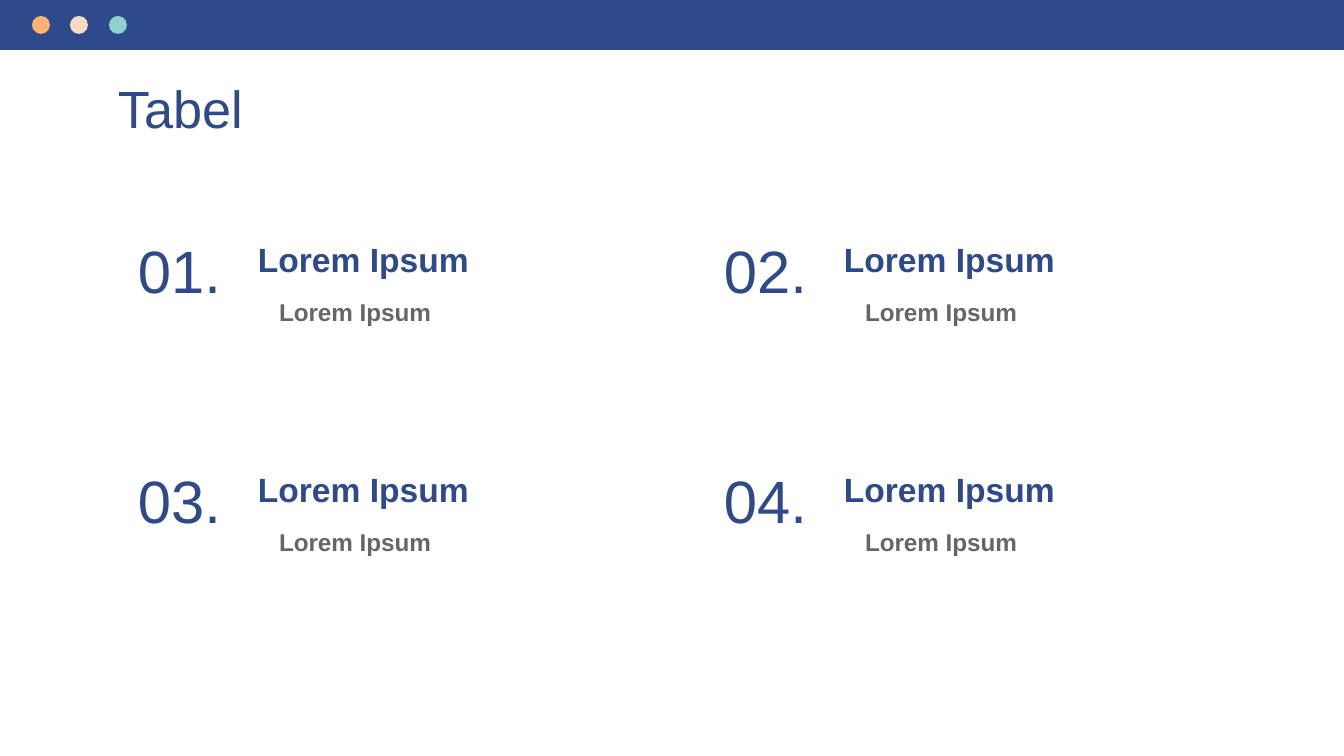
from dataclasses import dataclass

import pptx
import pptx.dml.color
import pptx.enum.shapes
import pptx.enum.text
import pptx.util

TITLE = "Tabel"
ENTRIES = [
    ("01.", "Lorem Ipsum", "Lorem Ipsum"),
    ("02.", "Lorem Ipsum", "Lorem Ipsum"),
    ("03.", "Lorem Ipsum", "Lorem Ipsum"),
    ("04.", "Lorem Ipsum", "Lorem Ipsum"),
]


@dataclass(frozen=True)
class Theme:
    font: str = "Arial"
    navy: str = "2F4A8A"
    grey: str = "666666"
    dots: tuple = ("FFB172", "F8DBC4", "90D1CB")
    title_size: int = 28
    number_size: int = 32
    heading_size: int = 18
    detail_size: int = 13


THEME = Theme()
WIDTH, HEIGHT = 1344, 756
EMU_PER_PX = 914400 * 10 / WIDTH
BAR_HEIGHT = 50
INSET = 13
COLUMNS = 2
COLUMN_STEP, ROW_STEP = 586, 230
HEADING_WIDTHS = (392, 400)
DOT_LEFT, DOT_TOP, DOT_SIZE = 32, 16, 18
DOT_SPAN = 77  # from the first dot to the third

ALIGN = pptx.enum.text.PP_ALIGN
ANCHOR = pptx.enum.text.MSO_ANCHOR
SHAPE = pptx.enum.shapes.MSO_SHAPE


def px(length):
    return pptx.util.Emu(round(length * EMU_PER_PX))


def rgb(colour):
    return pptx.dml.color.RGBColor.from_string(colour)


def add_text(slide, text, box, *, size, colour=THEME.navy, bold=False,
             align=ALIGN.LEFT, anchor=ANCHOR.TOP, margin=0, indent=0):
    frame = slide.shapes.add_textbox(*map(px, box)).text_frame
    frame.word_wrap = True
    frame.vertical_anchor = anchor
    frame.margin_left = frame.margin_right = px(INSET)
    frame.margin_top = frame.margin_bottom = px(INSET)
    paragraph = frame.paragraphs[0]
    paragraph.alignment = align
    if margin:
        properties = paragraph._p.get_or_add_pPr()
        properties.set("marL", str(px(margin)))
        properties.set("indent", str(px(indent)))
    run = paragraph.add_run()
    run.text = text
    run.font.name = THEME.font
    run.font.size = pptx.util.Pt(size)
    run.font.bold = bold
    run.font.color.rgb = rgb(colour)


def add_filled(slide, kind, box, colour):
    shape = slide.shapes.add_shape(kind, *map(px, box))
    shape.shadow.inherit = False
    shape.fill.solid()
    shape.fill.fore_color.rgb = rgb(colour)
    shape.line.fill.background()


def add_entry(slide, index, number, heading, detail):
    row, column = divmod(index, COLUMNS)
    x, y = column * COLUMN_STEP, row * ROW_STEP
    add_text(slide, heading, (245 + x, 226 + y, HEADING_WIDTHS[column], 69),
             size=THEME.heading_size, bold=True)
    add_text(slide, number, (113 + x, 233 + y, 133, 86),
             size=THEME.number_size, align=ALIGN.CENTER, anchor=ANCHOR.BOTTOM)
    add_text(slide, detail, (245 + x, 284 + y, 335, 86),
             size=THEME.detail_size, colour=THEME.grey, bold=True,
             margin=67, indent=-46)


def add_window_bar(slide):
    add_filled(slide, SHAPE.RECTANGLE, (0, 0, WIDTH, BAR_HEIGHT), THEME.navy)
    for index, colour in enumerate(THEME.dots):
        left = DOT_LEFT + index * DOT_SPAN // 2
        add_filled(slide, SHAPE.OVAL, (left, DOT_TOP, DOT_SIZE, DOT_SIZE), colour)


def main():
    deck = pptx.Presentation()
    deck.slide_width, deck.slide_height = px(WIDTH), px(HEIGHT)
    slide = deck.slides.add_slide(deck.slide_layouts[6])
    add_text(slide, TITLE, (105, 63, 1134, 69), size=THEME.title_size)
    for index, entry in enumerate(ENTRIES):
        add_entry(slide, index, *entry)
    add_window_bar(slide)
    deck.save("out.pptx")


if __name__ == "__main__":
    main()
